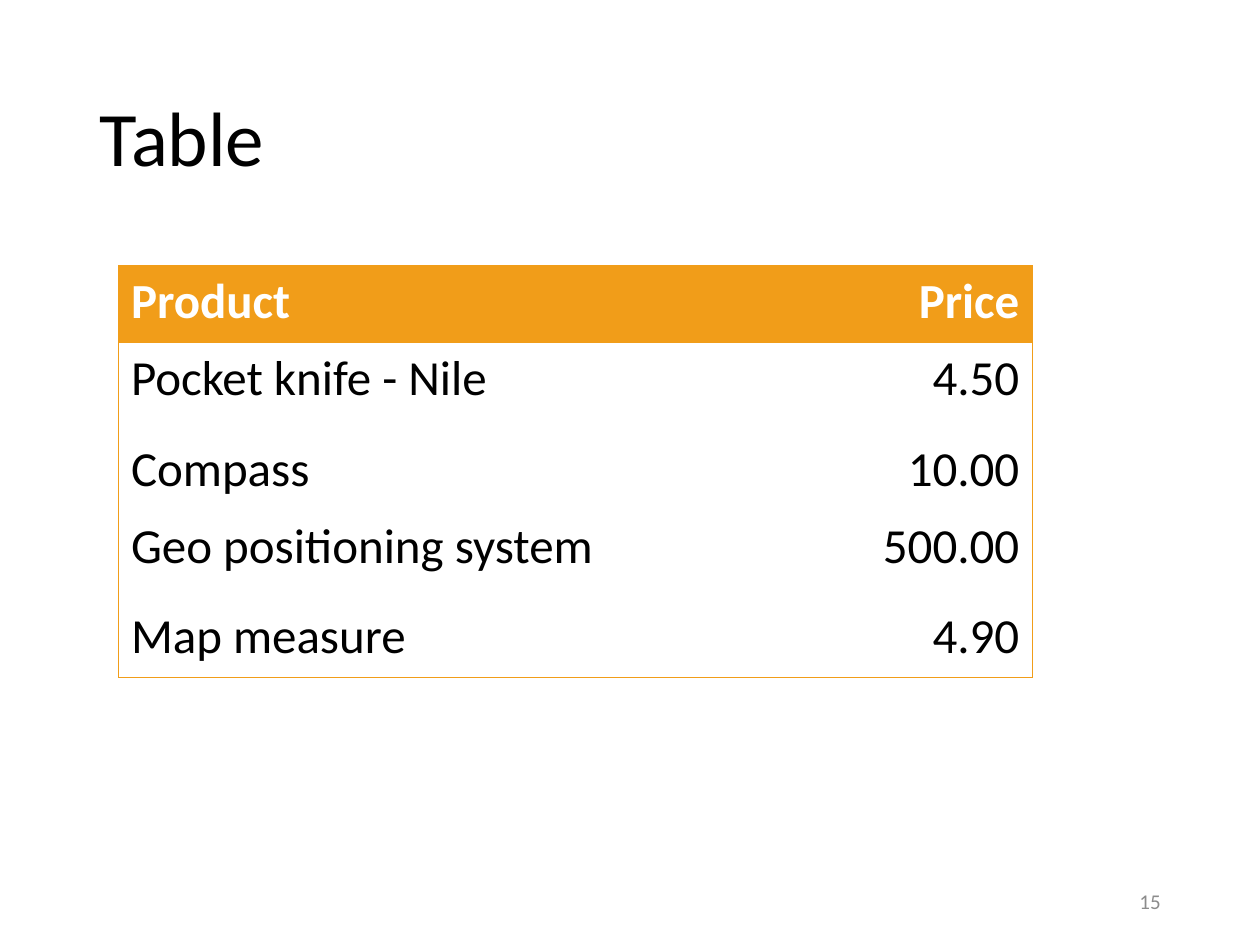
import pptx
import pptx.dml.color
import pptx.enum.text
import pptx.oxml
import pptx.oxml.ns
import pptx.util

Inches = pptx.util.Inches
Pt = pptx.util.Pt
ALIGN = pptx.enum.text.PP_ALIGN
MIDDLE = pptx.enum.text.MSO_ANCHOR.MIDDLE

COLORS = {"text": "000000", "header": "FFFFFF", "accent": "F19D19", "number": "8C8C8C"}
NAMESPACE = pptx.oxml.ns.nsdecls("a")

PRODUCTS = [
    ("Product", "Price"),
    ("Pocket knife - Nile", "4.50"),
    ("Compass", "10.00"),
    ("Geo positioning system", "500.00"),
    ("Map measure", "4.90"),
]
COLUMN_WIDTHS = [5.07, 2.18]
ROW_HEIGHTS = [0.61, 0.72, 0.61, 0.72, 0.61]


class SlideBuilder:
    def __init__(self, page, font="Calibri"):
        self.page = page
        self.font = font

    def color(self, name):
        return pptx.dml.color.RGBColor.from_string(COLORS[name])

    def set_text(self, frame, text, size, color, align=ALIGN.LEFT, bold=False):
        frame.text = text
        para = frame.paragraphs[0]
        para.alignment = align
        para.font.name = self.font
        para.font.size = Pt(size)
        para.font.bold = bold
        para.font.color.rgb = self.color(color)
        return para

    def place(self, box, left, top, width, height):
        box.left, box.top = Inches(left), Inches(top)
        box.width, box.height = Inches(width), Inches(height)

    def title(self, text, *bounds):
        box = self.page.shapes.title
        self.place(box, *bounds)
        box.text_frame.vertical_anchor = MIDDLE
        self.set_text(box.text_frame, text, 44, "text").line_spacing = 0.9

    def slide_number(self, text, *bounds):
        box = self.page.shapes.add_textbox(*map(Inches, bounds))
        box.text_frame.word_wrap = True
        box.text_frame.vertical_anchor = MIDDLE
        self.set_text(box.text_frame, text, 12, "number", ALIGN.RIGHT)

    def borders(self, cell, edges):
        """Draw the accent line on the given edges and hide the others."""
        properties = cell._tc.get_or_add_tcPr()
        for position, edge in enumerate("LRTB"):
            paint = "<a:noFill/>"
            if edge in edges:
                paint = f'<a:solidFill><a:srgbClr val="{COLORS["accent"]}"/></a:solidFill>'
            line = pptx.oxml.parse_xml(f'<a:ln{edge} {NAMESPACE} w="{Pt(0.5)}">{paint}</a:ln{edge}>')
            properties.insert(position, line)

    def table(self, rows, left, top, widths, heights):
        frame = self.page.shapes.add_table(
            len(rows), len(widths), Inches(left), Inches(top),
            Inches(sum(widths)), Inches(sum(heights)))
        table = frame.table
        table.horz_banding = False
        for column, width in zip(table.columns, widths):
            column.width = Inches(width)
        for row, height in zip(table.rows, heights):
            row.height = Inches(height)

        for row_index, values in enumerate(rows):
            is_header = row_index == 0
            for column_index, value in enumerate(values):
                cell = table.cell(row_index, column_index)
                if is_header:
                    cell.fill.solid()
                    cell.fill.fore_color.rgb = self.color("accent")
                else:
                    cell.fill.background()
                para = self.set_text(
                    cell.text_frame, value, 28, "header" if is_header else "text",
                    ALIGN.RIGHT if column_index else ALIGN.LEFT, is_header)
                # Spacing relative to the text size
                para._p.get_or_add_pPr().insert(0, pptx.oxml.parse_xml(
                    f'<a:spcBef {NAMESPACE}><a:spcPct val="20000"/></a:spcBef>'))
                edges = "R" if column_index else "L"
                edges += "T" if is_header else ""
                edges += "B" if row_index == len(rows) - 1 else ""
                self.borders(cell, edges)


def main():
    deck = pptx.Presentation()
    deck.slide_width, deck.slide_height = Inches(10), Inches(7.5)
    builder = SlideBuilder(deck.slides.add_slide(deck.slide_layouts[5]))

    # Title and slide number
    builder.title("Table", 0.69, 0.4, 8.62, 1.45)
    builder.slide_number("15", 7.06, 6.95, 2.25, 0.4)

    # Price list
    builder.table(PRODUCTS, 0.94, 2.11, COLUMN_WIDTHS, ROW_HEIGHTS)

    deck.save("out.pptx")


if __name__ == "__main__":
    main()
